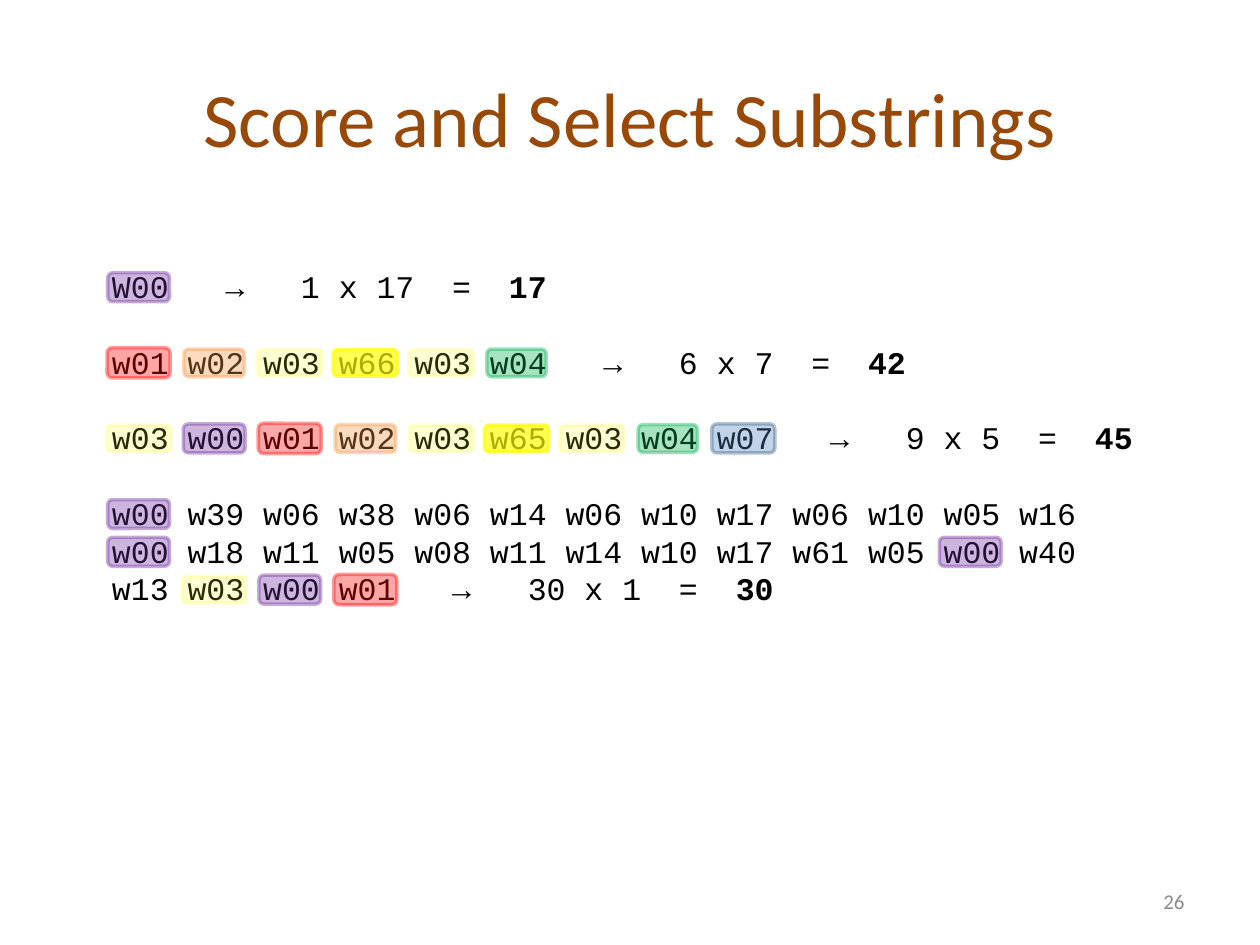
import pptx
import pptx.util
import pptx.dml.color
import pptx.enum.shapes
import pptx.enum.text
import pptx.oxml
import pptx.oxml.ns

Inches, Pt = pptx.util.Inches, pptx.util.Pt
ALIGN, ANCHOR = pptx.enum.text.PP_ALIGN, pptx.enum.text.MSO_ANCHOR

COLORS = {"title": "984807", "text": "000000", "number": "8C8C8C",
          "purple": "7030A0", "red": "FF0000", "orange": "F79646",
          "yellow": "FFFF00", "green": "00B050", "blue": "4F81BD",
          "navy": "3A5F8C"}

# Content: words, calculation, score
SCORES = [
    ("W00", "1 x 17", "17"),
    ("w01 w02 w03 w66 w03 w04", "6 x 7", "42"),
    ("w03 w00 w01 w02 w03 w65 w03 w04 w07", "9 x 5", "45"),
    ("w00 w39 w06 w38 w06 w14 w06 w10 w17 w06 w10 w05 w16 "
     "w00 w18 w11 w05 w08 w11 w14 w10 w17 w61 w05 w00 w40 "
     "w13 w03 w00 w01", "30 x 1", "30"),
]

# Marks: fill, line, fill opacity, line opacity, width, height
BRIGHT = ("yellow", "yellow", 67, 69, 0.51, 0.21)
MARKS = {
    "w00": ("purple", "purple", 35, 40, 0.49, 0.23),
    "w01": ("red", "red", 35, 38, 0.5, 0.24),
    "w02": ("orange", "orange", 35, 38, 0.48, 0.22),
    "w03": ("yellow", "yellow", 17, 17, 0.51, 0.21),
    "w04": ("green", "green", 35, 38, 0.47, 0.22),
    "w07": ("blue", "navy", 35, 40, 0.5, 0.23),
    "w65": BRIGHT,
    "w66": BRIGHT,
}

# Word grid: centre of the first word, steps, words per line
LEFT, TOP, STEP, LINE, COUNT = 1.1, 2.28, 0.6, 0.3, 13
LEAD = Pt(LINE * 72)


def rgb(name):
    return pptx.dml.color.RGBColor.from_string(COLORS[name])


def write(para, text, font="Calibri", size=18, color="text", bold=False,
          align=None):
    run = para.add_run()
    run.text = text
    run.font.name, run.font.size, run.font.bold = font, Pt(size), bold
    run.font.color.rgb = rgb(color)
    if align is not None:
        para.alignment = align


def paint(fill, color, alpha):
    fill.solid()
    fill.fore_color.rgb = rgb(color)
    node = next(fill._xPr.iter(pptx.oxml.ns.qn("a:srgbClr")))
    node.append(pptx.oxml.parse_xml(
        f'<a:alpha {pptx.oxml.ns.nsdecls("a")} val="{alpha * 1000}"/>'))


def mark(slide, word, col, row):
    fill, line, alpha, edge, wide, high = MARKS[word]
    box = slide.shapes.add_shape(
        pptx.enum.shapes.MSO_SHAPE.ROUNDED_RECTANGLE,
        Inches(LEFT + col * STEP - wide / 2),
        Inches(TOP + row * LINE - high / 2), Inches(wide), Inches(high))
    box.shadow.inherit = False
    paint(box.fill, fill, alpha)
    paint(box.line.fill, line, edge)
    box.line.width = Pt(2)


def main():
    deck = pptx.Presentation()
    deck.slide_width, deck.slide_height = Inches(10), Inches(7.5)
    slide = deck.slides.add_slide(deck.slide_layouts[5])

    # Title
    title = slide.shapes.title
    title.left, title.top = Inches(0.5), Inches(0.3)
    title.width, title.height = Inches(9), Inches(1.25)
    write(title.text_frame.paragraphs[0], "Score and Select Substrings",
          size=44, color="title", align=ALIGN.CENTER)

    # Slide number
    num = slide.shapes.add_textbox(Inches(7.17), Inches(6.95),
                                   Inches(2.33), Inches(0.4)).text_frame
    num.word_wrap, num.vertical_anchor = True, ANCHOR.MIDDLE
    write(num.paragraphs[0], "26", size=12, color="number",
          align=ALIGN.RIGHT)

    # Substrings with their scores
    body = slide.shapes.add_textbox(Inches(0.79), Inches(1.78),
                                    Inches(8.38), Inches(3.13)).text_frame
    body.word_wrap, body.margin_top = True, Inches(0.34)
    for i, (words, product, score) in enumerate(SCORES):
        para = body.add_paragraph() if i else body.paragraphs[0]
        para.line_spacing = LEAD
        para.space_before = LEAD if i else Pt(0)
        write(para, f"{words}   →   {product}  =  ", font="Courier New")
        write(para, score, font="Courier New", bold=True)

        # Colour marks over the frequent words
        for j, word in enumerate(words.lower().split()):
            if word in MARKS:
                mark(slide, word, j % COUNT, 2 * i + j // COUNT)

    deck.save("out.pptx")


if __name__ == "__main__":
    main()
